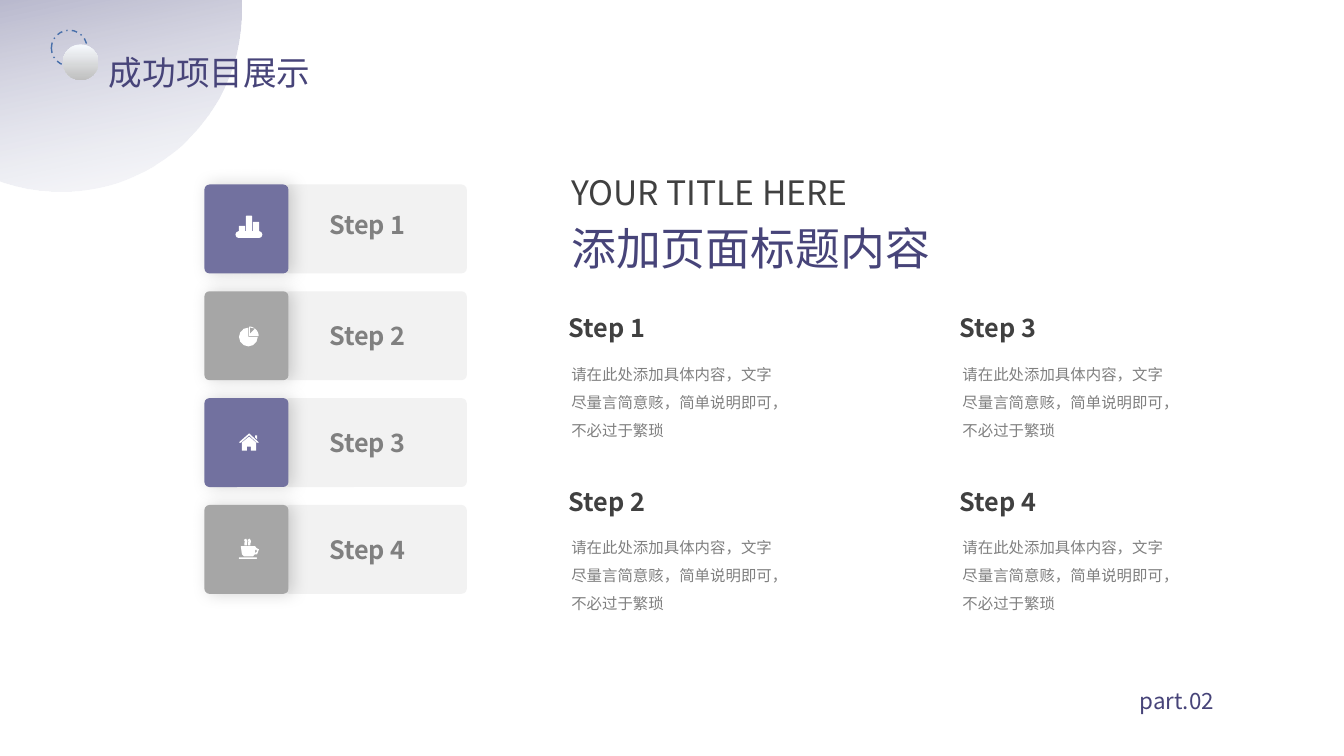
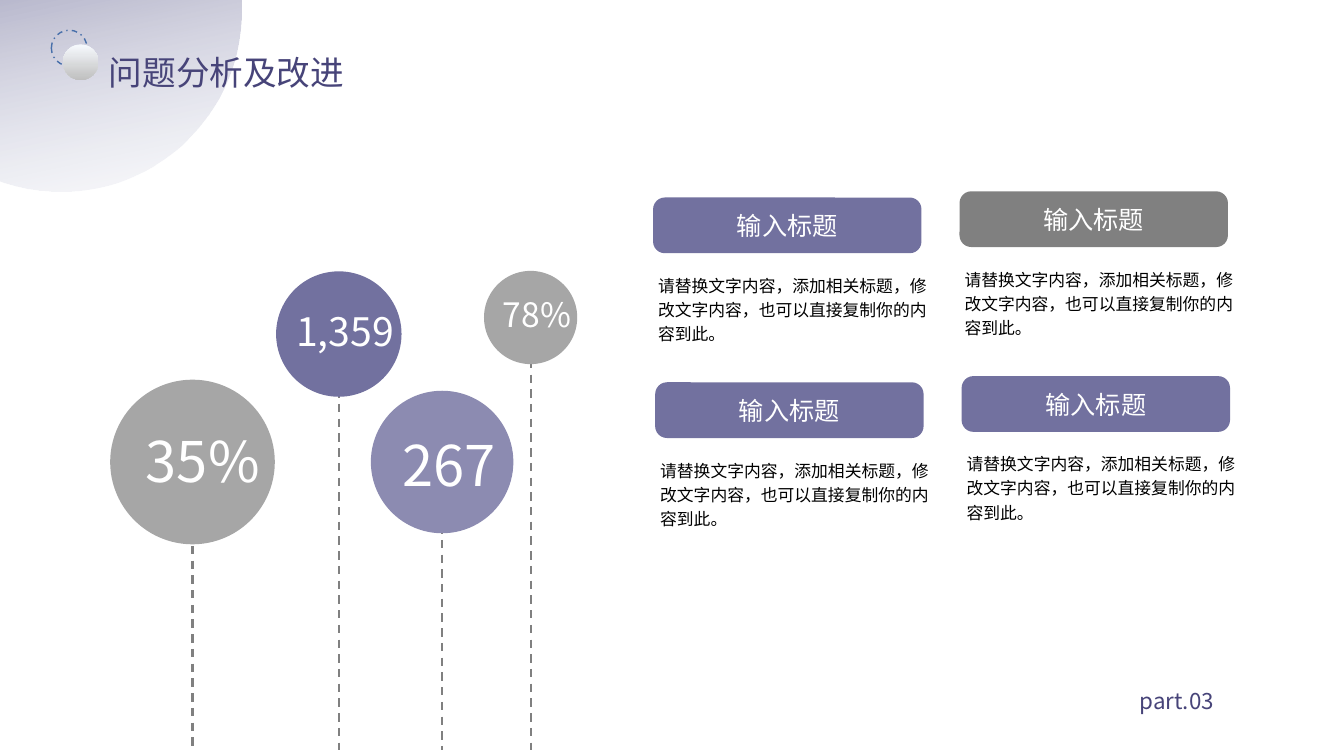
import math

from lxml import etree
from pptx import Presentation
from pptx.dml.color import RGBColor
from pptx.enum.dml import MSO_LINE
from pptx.enum.shapes import MSO_CONNECTOR, MSO_SHAPE
from pptx.enum.text import MSO_ANCHOR, MSO_AUTO_SIZE, PP_ALIGN
from pptx.oxml.ns import qn
from pptx.util import Pt

ELLIPSE, ROUNDED, PIE = MSO_SHAPE.OVAL, MSO_SHAPE.ROUNDED_RECTANGLE, MSO_SHAPE.PIE
STRAIGHT = MSO_CONNECTOR.STRAIGHT
DASH, DASH_DOT = MSO_LINE.DASH, MSO_LINE.DASH_DOT
LEFT, CENTER, JUSTIFY = PP_ALIGN.LEFT, PP_ALIGN.CENTER, PP_ALIGN.JUSTIFY
TOP, MIDDLE = MSO_ANCHOR.TOP, MSO_ANCHOR.MIDDLE
NO_FIT = MSO_AUTO_SIZE.NONE

FONT = "Noto Sans CJK SC"
INDIGO, PURPLE, LILAC = "474479", "72719F", "8C8BB1"
DARK, GREY, MID, SILVER, PALE = "404040", "808080", "A6A6A6", "BFBFBF", "F2F2F2"
WHITE, BLACK, MIST, BLUE = "FFFFFF", "000000", "F7FAFE", "476FAA"

STEP_TEXT = "请在此处添加具体内容，文字尽量言简意赅，简单说明即可，不必过于繁琐"
PANEL_TEXT = "请替换文字内容，添加相关标题，修改文字内容，也可以直接复制你的内容到此。"


def rgb(value):
    return RGBColor.from_string(value)


def write(shape, text, size, color, bold=False, align=LEFT, spacing=None, anchor=TOP, inset=(7.2, 3.6)):
    tf = shape.text_frame
    side, edge = map(Pt, inset)
    frame = {"word_wrap": True, "auto_size": NO_FIT, "vertical_anchor": anchor,
             "margin_left": side, "margin_right": side, "margin_top": edge, "margin_bottom": edge}
    p = tf.paragraphs[0]
    r = p.add_run()
    r.text = text
    formats = (
        (tf, frame),
        (p, {"alignment": align, "line_spacing": spacing}),
        (r.font, {"name": FONT, "size": Pt(size), "bold": bold}),
    )
    for target, values in formats:
        for name, value in values.items():
            setattr(target, name, value)
    r.font.color.rgb = rgb(color)
    etree.SubElement(r.font._element, qn("a:ea")).set("typeface", FONT)


def add_text(s, box, text, size, color, **options):
    write(s.shapes.add_textbox(*map(Pt, box)), text, size, color, **options)


def paint(shape, fill=None):
    shape.shadow.inherit = False
    shape.line.fill.background()
    if fill:
        shape.fill.solid()
        shape.fill.fore_color.rgb = rgb(fill)
    else:
        shape.fill.background()


def add_shape(s, kind, box, fill=None, radius=None):
    sp = s.shapes.add_shape(kind, *map(Pt, box))
    paint(sp, fill)
    if radius is not None:
        sp.adjustments[0] = radius
    return sp


def set_line(shape, color, width, dash=None):
    shape.line.color.rgb = rgb(color)
    shape.line.width = Pt(width)
    if dash:
        shape.line.dash_style = dash


def add_gradient(shape, start, end, opacity=100):
    shape.fill.gradient()
    shape.fill.gradient_angle = 270
    stops = shape.fill.gradient_stops
    for stop, color in zip(stops, (start, end)):
        stop.color.rgb = rgb(color)
    color = shape._element.spPr.find(".//" + qn("a:srgbClr"))
    etree.SubElement(color, qn("a:alpha")).set("val", str(opacity * 1000))


def add_shadow(shape):
    effects = shape._element.spPr.find(qn("a:effectLst"))
    shadow = etree.SubElement(effects, qn("a:outerShdw"), blurRad=str(Pt(12)), dist=str(Pt(3)),
                              dir="0", algn="l", rotWithShape="0")
    color = etree.SubElement(shadow, qn("a:srgbClr"), val=BLACK)
    etree.SubElement(color, qn("a:alpha"), val="17000")


def add_line(s, start, end, color, width, dash=None, cap="flat"):
    line = s.shapes.add_connector(STRAIGHT, *map(Pt, (*start, *end)))
    set_line(line, color, width, dash)
    line.line._get_or_add_ln().set("cap", cap)
    etree.SubElement(line._element.spPr, qn("a:effectLst"))


def add_outline(s, origin, *contours, closed=True):
    placed = [[(Pt(origin[0] + x), Pt(origin[1] + y)) for x, y in c] for c in contours]
    builder = s.shapes.build_freeform(*placed[0][0], scale=1.0)
    for i, points in enumerate(placed):
        if i:
            builder.move_to(*points[0])
        builder.add_line_segments(points[1:], close=closed)
    sp = builder.convert_to_shape()
    paint(sp, WHITE if closed else None)
    return sp


def bars_icon(s, x, y):
    for i, top in enumerate((-2.5, -9.7, -5.4)):
        add_shape(s, ROUNDED, (x - 7.4 + 5 * i, y + top, 4.5, 2.5 - top), WHITE, 0.12)
    add_line(s, (x - 7.4, y + 4), (x + 7, y + 4), WHITE, 4.88, cap="rnd")


def pie_icon(s, x, y):
    add_shape(s, PIE, (x - 7.3, y - 6.1, 13.4, 13.4), WHITE)
    arc = [(6.8 * math.sin(a), -6.8 * math.cos(a)) for a in (math.radians(d) for d in range(0, 91, 10))]
    add_outline(s, (x, y), [(0, 0), *arc], [(0.6, -1.8), (0.6, -6.1), (4.2, -5.4)])


def house_icon(s, x, y):
    walls = [(-5.2, 5.4), (-1.6, 5.4), (-1.6, 2.6), (1.3, 2.6), (1.3, 5.4),
             (4.9, 5.4), (4.9, -0.3), (0, -4.6), (-5.2, -0.3)]
    roof = [(-7.4, -0.3), (0, -6.8), (7, -0.3), (5.6, -0.1), (0, -5.4), (-5.9, -0.1)]
    chimney = [(5.6, -5.4), (4.2, -5.4), (4.2, -3.9), (5.6, -2.5)]
    for part in (walls, roof, chimney):
        add_outline(s, (x, y), part)


def cup_icon(s, x, y):
    add_shape(s, ROUNDED, (x - 7.4, y + 5.4, 13, 1.2), WHITE, 0.5)
    cup = [(-6, -2.5), (4.2, -2.5), (5.2, -1.2), (7, -0.3), (5.6, 3.3), (4, 3.3),
           (2.7, 4.7), (-3.8, 4.7), (-5.2, 3.3)]
    handle = [(5.6, 1.1), (4.9, -0.3), (4.2, 0.4), (4.2, 2.6)]
    add_outline(s, (x, y), cup, handle)
    for shift in (0, 2.6):
        steam = [(-2.6, -3.2), (-2.6, -4.6), (-2.1, -6), (-3, -7.5)]
        sp = add_outline(s, (x + shift, y), steam, closed=False)
        set_line(sp, WHITE, 1.75)


def start_slide(prs, title, part):
    s = prs.slides.add_slide(prs.slide_layouts[5])
    corner = add_shape(s, ELLIPSE, (-87.1, -124.6, 259.2, 261.4))
    corner.rotation = 168
    add_gradient(corner, MIST, INDIGO, 29)
    ring = add_shape(s, ELLIPSE, (36.7, 21.6, 25.5, 25.5))
    set_line(ring, BLUE, 1, DASH_DOT)
    ball = add_shape(s, ELLIPSE, (44.9, 31.7, 25.5, 25.5))
    add_gradient(ball, MIST, SILVER)
    heading = s.shapes.title
    heading.left, heading.top, heading.width, heading.height = map(Pt, (70.6, 18.7, 230, 46))
    write(heading, title, 24, INDIGO, align=JUSTIFY, spacing=1.5)
    s.shapes._spTree.append(heading._element)
    add_text(s, (807, 477.4, 112, 33), part, 16, INDIGO, align=JUSTIFY, spacing=1.5)
    return s


def add_step_card(s, i, color, icon, label_drop):
    y = 131.8 + 76.3 * i
    add_shape(s, ROUNDED, (203, y, 130.5, 63.5), PALE, 0.06)
    add_shadow(add_shape(s, ROUNDED, (146, y, 60, 63.5), color, 0.06))
    add_text(s, (210.2, y + label_drop, 104.4, 29), f"Step {i + 1}", 18, GREY, bold=True, align=CENTER)
    icon(s, 178, y + 32)


def add_step_note(s, i):
    col, row = divmod(i, 2)
    x, y = 399 + 279.4 * col, 219.6 + 124.2 * row
    add_text(s, (x, y, 160, 29), f"Step {i + 1}", 18, DARK, bold=True)
    add_text(s, (x + 2, y + 30.5, 158.5, 68), STEP_TEXT, 11, GREY, spacing=Pt(20))


def add_panel(s, i, color):
    row, col = divmod(i, 2)
    x, y = 466.5 + 218.9 * col + 1.5 * row, 141.1 - 4.4 * col + 132 * row
    pill = add_shape(s, ROUNDED, (x, y, 191.7, 39.8), color, 0.21)
    write(pill, "输入标题", 18, WHITE, align=CENTER, anchor=MIDDLE)
    add_text(s, (x - 1.4, y + 49.9, 206.6, 57.6), PANEL_TEXT, 12, BLACK, spacing=1.2, inset=(5, 2.9))


def projects_slide(prs):
    s = start_slide(prs, "成功项目展示", "part.02")
    cards = ((PURPLE, bars_icon, 14.4), (MID, pie_icon, 17.3),
             (PURPLE, house_icon, 17.3), (MID, cup_icon, 17.3))
    for i, card in enumerate(cards):
        add_step_card(s, i, *card)
        add_step_note(s, i)
    add_text(s, (401, 119.5, 250, 34), "YOUR TITLE HERE", 24, DARK)
    add_text(s, (401, 154, 276, 46), "添加页面标题内容", 32, INDIGO)


def analysis_slide(prs):
    s = start_slide(prs, "问题分析及改进", "part.03")
    for i, color in enumerate((PURPLE, GREY, PURPLE, PURPLE)):
        add_panel(s, i, color)
    bubbles = (
        (137.5, 330, 117.6, 379.4, MID, "35%", 40, (97.2, 301)),
        (315.8, 330, 101.8, 375.1, LILAC, "267", 40, (280.1, 303.8)),
        (242, 238.6, 89.6, 257, PURPLE, "1,359", 28, (204.5, 216)),
        (379, 226.8, 66.6, 257, MID, "78%", 24, (352.1, 206.6)),
    )
    for x, y, size, stem_top, color, text, points, corner in bubbles:
        add_line(s, (x, stem_top), (x, 535.5), GREY, 1.5, DASH)
    for x, y, size, stem_top, color, text, points, corner in bubbles:
        add_shape(s, ELLIPSE, (x - size / 2, y - size / 2, size, size), color)
        add_text(s, (*corner, 105, 56), text, points, WHITE)


def main():
    prs = Presentation()
    prs.slide_width, prs.slide_height = Pt(960), Pt(540)
    projects_slide(prs)
    analysis_slide(prs)
    prs.save("out.pptx")


if __name__ == "__main__":
    main()
